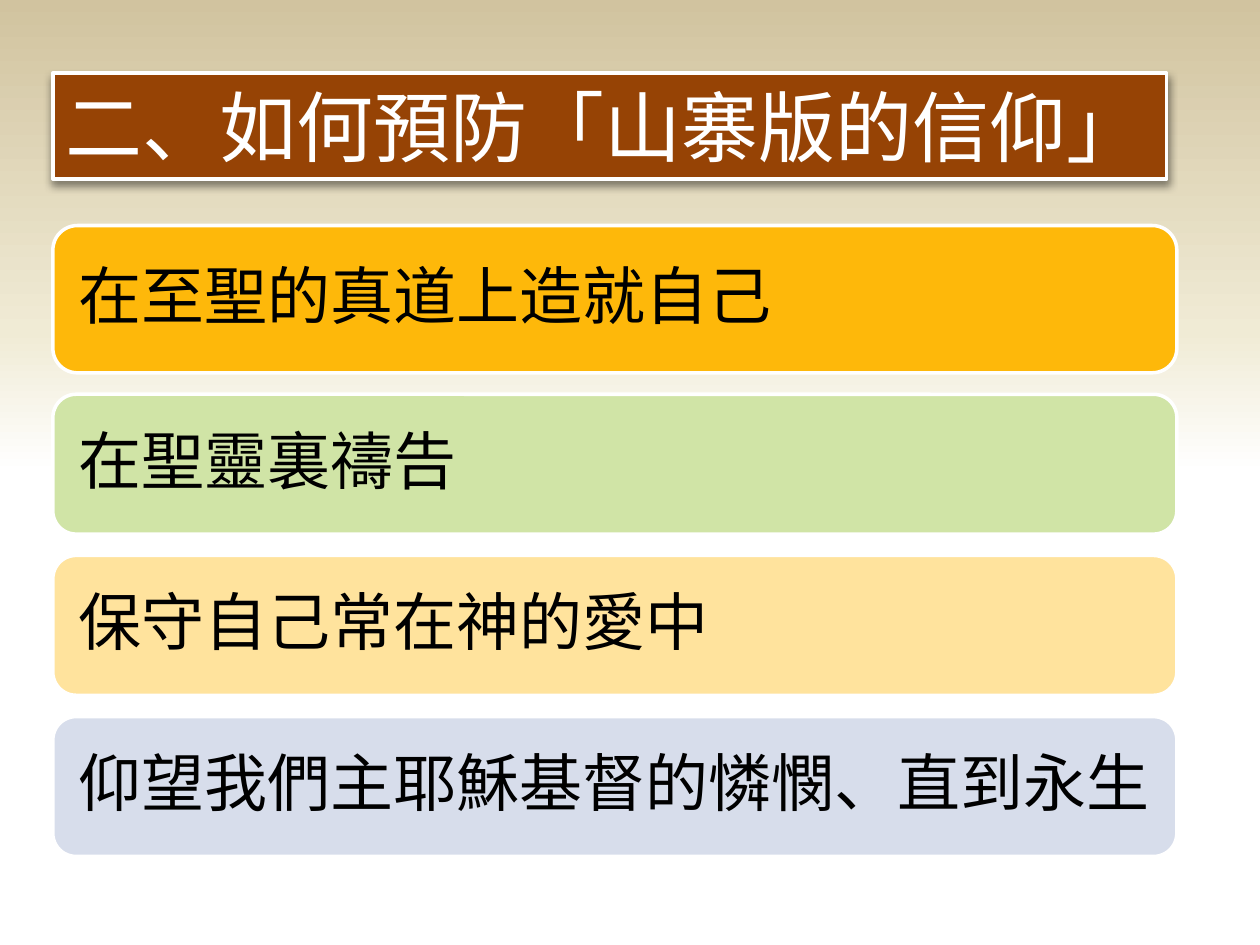
from lxml import etree
from pptx import Presentation
from pptx.dml.color import RGBColor
from pptx.enum.shapes import MSO_SHAPE
from pptx.enum.text import MSO_ANCHOR, MSO_AUTO_SIZE, PP_ALIGN
from pptx.oxml.ns import qn
from pptx.util import Pt

ROUNDED = MSO_SHAPE.ROUNDED_RECTANGLE
MIDDLE, LEFT = MSO_ANCHOR.MIDDLE, PP_ALIGN.LEFT
FIT_SHAPE = MSO_AUTO_SIZE.SHAPE_TO_FIT_TEXT
TITLE_ONLY = 5

TITLE = "二、如何預防「山寨版的信仰」"
# wording, fill, height
BARS = [
    ("在至聖的真道上造就自己", "FEB80A", 84.2),
    ("在聖靈裏禱告", "D0E4A6", 79.9),
    ("保守自己常在神的愛中", "FFE39D", 79.9),
    ("仰望我們主耶穌基督的憐憫、直到永生", "D7DDEB", 79.9),
]
THEME = {
    "font": "Arial",
    "title_size": 44, "title_color": "FFFFFF", "title_fill": "964305",
    "bar_size": 36, "bar_color": "000000",
    "outline": "FFFFFF", "outline_width": 2,
    "background": [(50, "FFFFFF"), (65, "F0EBD5"), (100, "D1C39F")],
}
LEFT_EDGE = 30.2
TITLE_BOX = (LEFT_EDGE, 41.8, 636.5, 60.5)
BARS_TOP, BAR_WIDTH, BAR_GAP = 128.9, 642.3, 12.2
BAR_INSET = 10.8


def add_color(parent, value):
    return etree.SubElement(parent, qn("a:srgbClr"), val=value)


def paint_background(slide):
    fill = slide.background.fill
    fill.gradient()
    fill.gradient_angle = 90
    stops = next(slide.element.iter(qn("a:gsLst")))
    for stop in list(stops):
        stops.remove(stop)
    for position, color in THEME["background"]:
        stop = etree.SubElement(stops, qn("a:gs"), pos=str(position * 1000))
        add_color(stop, color)


def paint_box(box, color):
    box.fill.solid()
    box.fill.fore_color.rgb = RGBColor.from_string(color)
    box.line.color.rgb = RGBColor.from_string(THEME["outline"])
    box.line.width = Pt(THEME["outline_width"])
    box.shadow.inherit = False


def write_text(box, text, role, frame_format, para_format):
    frame = box.text_frame
    frame.text = text
    para = frame.paragraphs[0]
    font_format = {
        "name": THEME["font"],
        "size": Pt(THEME[role + "_size"]),
        "bold": False,
    }
    font = para.runs[0].font
    font.color.rgb = RGBColor.from_string(THEME[role + "_color"])
    for target, values in ((frame, frame_format), (para, para_format), (font, font_format)):
        for name, value in values.items():
            setattr(target, name, value)


def add_drop_shadow(box):
    effects = next(box.element.iter(qn("a:effectLst")))
    shadow = etree.SubElement(
        effects, qn("a:outerShdw"), blurRad=str(Pt(5)), dist=str(Pt(2)),
        dir="5400000", rotWithShape="0")
    etree.SubElement(add_color(shadow, "000000"), qn("a:alpha"), val="43000")


def add_title(slide):
    title = slide.shapes.title
    title.left, title.top, title.width, title.height = map(Pt, TITLE_BOX)
    paint_box(title, THEME["title_fill"])
    add_drop_shadow(title)
    write_text(
        title, TITLE, "title",
        {"vertical_anchor": MIDDLE, "word_wrap": False, "auto_size": FIT_SHAPE},
        {"alignment": LEFT})


def add_bars(slide):
    margins = ("margin_left", "margin_top", "margin_right", "margin_bottom")
    frame_format = dict.fromkeys(margins, Pt(BAR_INSET))
    frame_format.update(vertical_anchor=MIDDLE, word_wrap=True)
    para_format = {"alignment": LEFT, "line_spacing": 0.9, "space_after": Pt(12.6)}
    top = BARS_TOP
    for text, color, height in BARS:
        bar = slide.shapes.add_shape(
            ROUNDED, Pt(LEFT_EDGE), Pt(top), Pt(BAR_WIDTH), Pt(height))
        paint_box(bar, color)
        write_text(bar, text, "bar", frame_format, para_format)
        top += height + BAR_GAP


def main():
    deck = Presentation()
    deck.slide_width, deck.slide_height = Pt(720), Pt(540)
    slide = deck.slides.add_slide(deck.slide_layouts[TITLE_ONLY])
    paint_background(slide)
    add_title(slide)
    add_bars(slide)
    deck.save("out.pptx")


if __name__ == "__main__":
    main()
